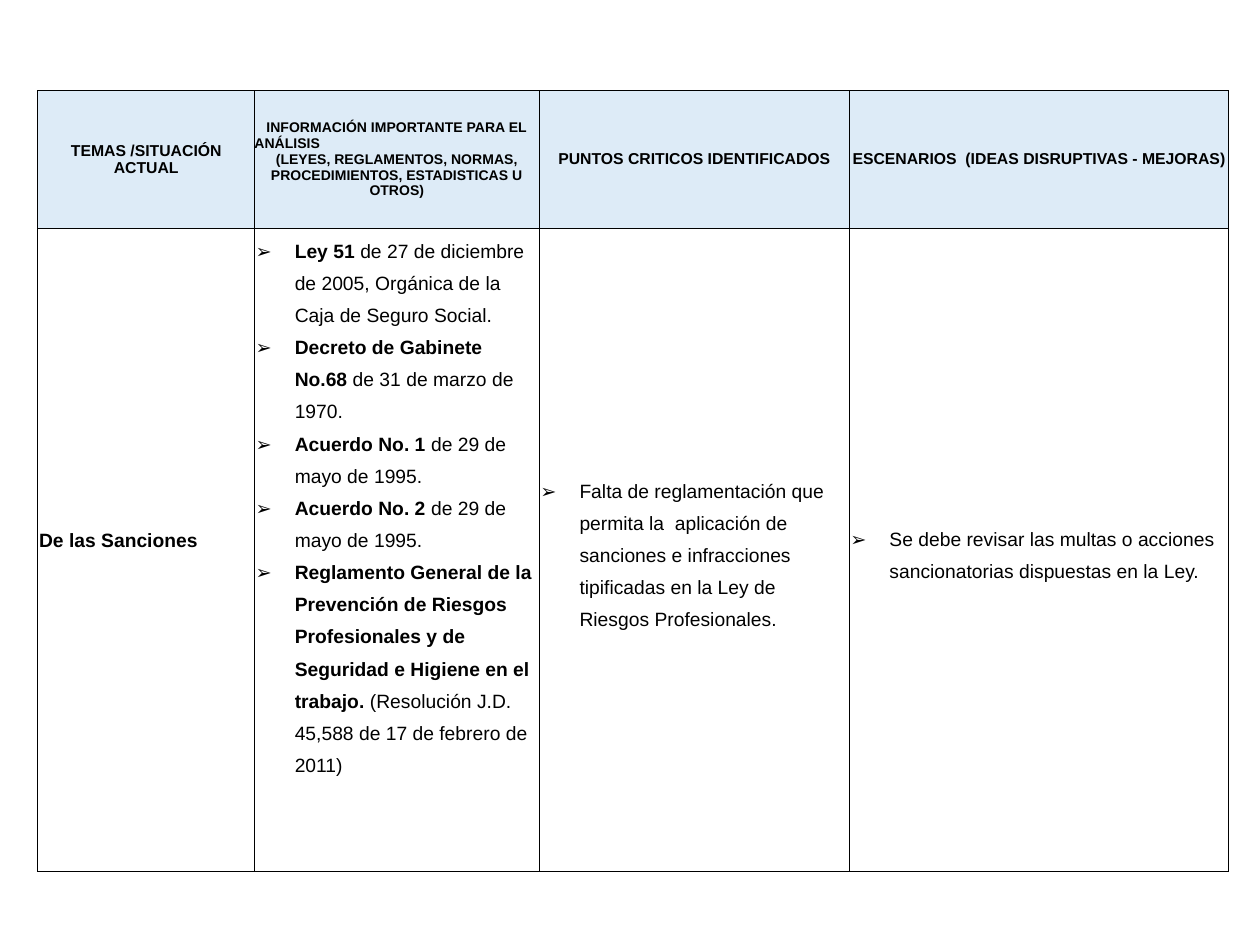
from lxml.etree import SubElement
from pptx import Presentation
from pptx.dml.color import RGBColor
from pptx.enum.text import MSO_ANCHOR, PP_ALIGN
from pptx.oxml.ns import qn
from pptx.util import Inches, Pt

COLORS = {"text": "000000", "border": "000000", "header": "DDEBF7"}
COLUMN_WIDTHS = [1.72, 2.26, 2.46, 3.01]
ROW_HEIGHTS = [1.09, 5.11]
HEADER_MARGINS = {"margin_left": 0, "margin_right": 0, "margin_top": 0, "margin_bottom": 0}
BODY_MARGINS = {"margin_left": 0.01, "margin_right": 0.01, "margin_top": 0.01, "margin_bottom": 0}

HEADERS = [
    (9, [("TEMAS /SITUACIÓN ACTUAL", PP_ALIGN.CENTER)]),
    (8, [
        ("INFORMACIÓN IMPORTANTE PARA EL", PP_ALIGN.CENTER),
        ("ANÁLISIS", PP_ALIGN.LEFT),
        ("(LEYES, REGLAMENTOS, NORMAS, PROCEDIMIENTOS, ESTADISTICAS U OTROS)", PP_ALIGN.CENTER),
    ]),
    (9, [("PUNTOS CRITICOS IDENTIFICADOS", PP_ALIGN.CENTER)]),
    (9, [("ESCENARIOS  (IDEAS DISRUPTIVAS - MEJORAS)", PP_ALIGN.CENTER)]),
]
TOPIC = "De las Sanciones"
LAWS = [
    ("Ley 51 ", "de 27 de diciembre de 2005, Orgánica de la Caja de Seguro Social."),
    ("Decreto de Gabinete No.68", " de 31 de marzo de 1970."),
    ("Acuerdo No. 1 ", "de 29 de mayo de 1995."),
    ("Acuerdo No. 2", " de 29 de mayo de 1995."),
    ("Reglamento General de la Prevención de Riesgos Profesionales y de Seguridad e Higiene "
     "en el trabajo. ", "(Resolución J.D. 45,588 de 17 de febrero de 2011)"),
]
CRITICAL_POINTS = [("", "Falta de reglamentación que permita la  aplicación de sanciones e "
                        "infracciones tipificadas en la Ley de Riesgos Profesionales.")]
SCENARIOS = [("", "Se debe revisar las multas o acciones sancionatorias dispuestas en la Ley.")]


def add_borders(cell):
    """Draw a thin line on all four sides of a cell."""
    properties = cell._tc.get_or_add_tcPr()
    for side in ("a:lnL", "a:lnR", "a:lnT", "a:lnB"):
        line = SubElement(properties, qn(side), w=str(Pt(0.5)))
        SubElement(SubElement(line, qn("a:solidFill")), qn("a:srgbClr"), val=COLORS["border"])


def format_cell(cell, margins, fill=None):
    """Set the borders, margins, anchor and fill of a cell."""
    add_borders(cell)
    for name, length in margins.items():
        setattr(cell, name, Inches(length))
    cell.vertical_anchor = MSO_ANCHOR.MIDDLE
    if fill:
        cell.fill.solid()
        cell.fill.fore_color.rgb = RGBColor.from_string(fill)
    else:
        cell.fill.background()


def add_text(paragraph, text, size, bold):
    """Add one formatted run to a paragraph."""
    run = paragraph.add_run()
    run.text = text
    for name, setting in {"name": "Arial", "size": Pt(size), "bold": bold}.items():
        setattr(run.font, name, setting)
    run.font.color.rgb = RGBColor.from_string(COLORS["text"])


def add_paragraphs(cell, count):
    """Return the given number of paragraphs of an empty cell."""
    frame = cell.text_frame
    return [frame.paragraphs[0]] + [frame.add_paragraph() for _ in range(count - 1)]


def fill_header(cell, size, lines):
    """Write the aligned bold lines of a column heading."""
    format_cell(cell, HEADER_MARGINS, COLORS["header"])
    for paragraph, (text, alignment) in zip(add_paragraphs(cell, len(lines)), lines):
        paragraph.alignment = alignment
        add_text(paragraph, text, size, True)


def fill_topic(cell, topic):
    """Write the bold topic of the row."""
    format_cell(cell, BODY_MARGINS | {"margin_bottom": 0.16})
    add_text(cell.text_frame.paragraphs[0], topic, 11, True)


def fill_bullets(cell, items, bottom=0):
    """Write arrow bullets, each with a bold lead and a plain remainder."""
    format_cell(cell, BODY_MARGINS | {"margin_bottom": bottom})
    for paragraph, (lead, remainder) in zip(add_paragraphs(cell, len(items)), items):
        paragraph.line_spacing = 1.5
        properties = paragraph._p.get_or_add_pPr()
        properties.set("marL", str(Inches(0.31)))
        properties.set("indent", str(-Inches(0.31)))
        SubElement(properties, qn("a:buFont"), typeface="Arial")
        SubElement(properties, qn("a:buChar"), char="➢")
        if lead:
            add_text(paragraph, lead, 11, True)
        add_text(paragraph, remainder, 11, False)


def add_analysis_table(slide, left, top):
    """Build the analysis table with its top left corner at the given place."""
    table = slide.shapes.add_table(
        len(ROW_HEIGHTS), len(COLUMN_WIDTHS), left, top,
        Inches(sum(COLUMN_WIDTHS)), Inches(sum(ROW_HEIGHTS))).table
    table.first_row = table.horz_banding = False
    for column, width in zip(table.columns, COLUMN_WIDTHS):
        column.width = Inches(width)
    for row, height in zip(table.rows, ROW_HEIGHTS):
        row.height = Inches(height)
    for index, (size, lines) in enumerate(HEADERS):
        fill_header(table.cell(0, index), size, lines)
    fill_topic(table.cell(1, 0), TOPIC)
    fill_bullets(table.cell(1, 1), LAWS, bottom=0.75)
    fill_bullets(table.cell(1, 2), CRITICAL_POINTS)
    fill_bullets(table.cell(1, 3), SCENARIOS)


def main():
    """Create and save the presentation."""
    presentation = Presentation()
    presentation.slide_width = Inches(10)
    presentation.slide_height = Inches(7.5)
    slide = presentation.slides.add_slide(presentation.slide_layouts[6])
    add_analysis_table(slide, Inches(0.3), Inches(0.72))
    presentation.save("out.pptx")


if __name__ == "__main__":
    main()
